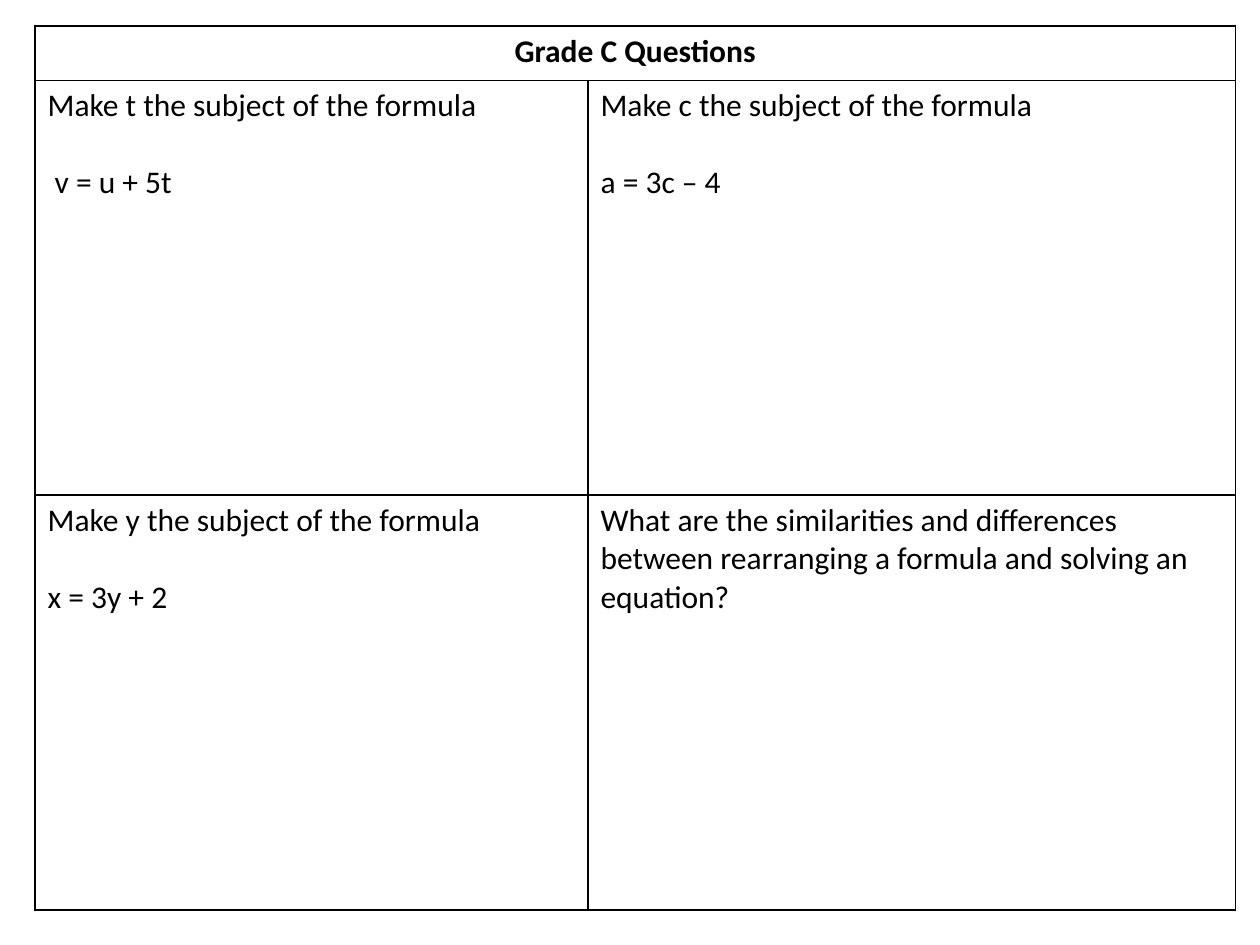
from lxml import etree
from pptx import Presentation
from pptx import util as u
from pptx.dml import color
from pptx.enum import text
from pptx.oxml import ns

INK = "000000"
PAPER = "FFFFFF"
SIZE = 18
GAP = 22
COLS = [316, 370]
ROWS = [31, 237, 237]
TASKS = [
    [["Make t the subject of the formula", " v = u + 5t"],
     ["Make c the subject of the formula", "a = 3c – 4"]],
    [["Make y the subject of the formula", "x = 3y + 2"],
     ["What are the similarities and differences between rearranging "
      "a formula and solving an equation?"]],
]


def tint(code):
    return color.RGBColor.from_string(code)


def frame(cell):
    props = cell._tc.get_or_add_tcPr()
    for side in "LRTB":
        line = etree.SubElement(props, ns.qn(f"a:ln{side}"), w=str(u.Pt(1)))
        fill = etree.SubElement(line, ns.qn("a:solidFill"))
        etree.SubElement(fill, ns.qn("a:srgbClr"), val=INK)
    cell.fill.solid()
    cell.fill.fore_color.rgb = tint(PAPER)


def write(cell, lines, bold=False, align=text.PP_ALIGN.LEFT):
    body = cell.text_frame
    for i, line in enumerate(lines):
        para = body.add_paragraph() if i else body.paragraphs[0]
        para.alignment = align
        para.space_before = u.Pt(GAP if i else 0)
        run = para.add_run()
        run.text = line
        font = run.font
        font.name, font.size, font.bold = "Calibri", u.Pt(SIZE), bold
        font.color.rgb = tint(INK)


def add_grid(slide, left, top):
    shape = slide.shapes.add_table(
        len(ROWS), len(COLS), u.Pt(left), u.Pt(top),
        u.Pt(sum(COLS)), u.Pt(sum(ROWS)))
    grid = shape.table
    for col, width in zip(grid.columns, COLS):
        col.width = u.Pt(width)
    for row, height in zip(grid.rows, ROWS):
        row.height = u.Pt(height)
    for cell in grid.iter_cells():
        frame(cell)
    return grid


def main():
    deck = Presentation()
    deck.slide_width, deck.slide_height = u.Pt(720), u.Pt(540)
    slide = deck.slides.add_slide(deck.slide_layouts[6])
    grid = add_grid(slide, 20, 15)
    head = grid.cell(0, 0)
    head.merge(grid.cell(0, 1))
    write(head, ["Grade C Questions"], True, text.PP_ALIGN.CENTER)
    for r, row in enumerate(TASKS, 1):
        for c, lines in enumerate(row):
            write(grid.cell(r, c), lines)
    deck.save("out.pptx")


if __name__ == "__main__":
    main()
